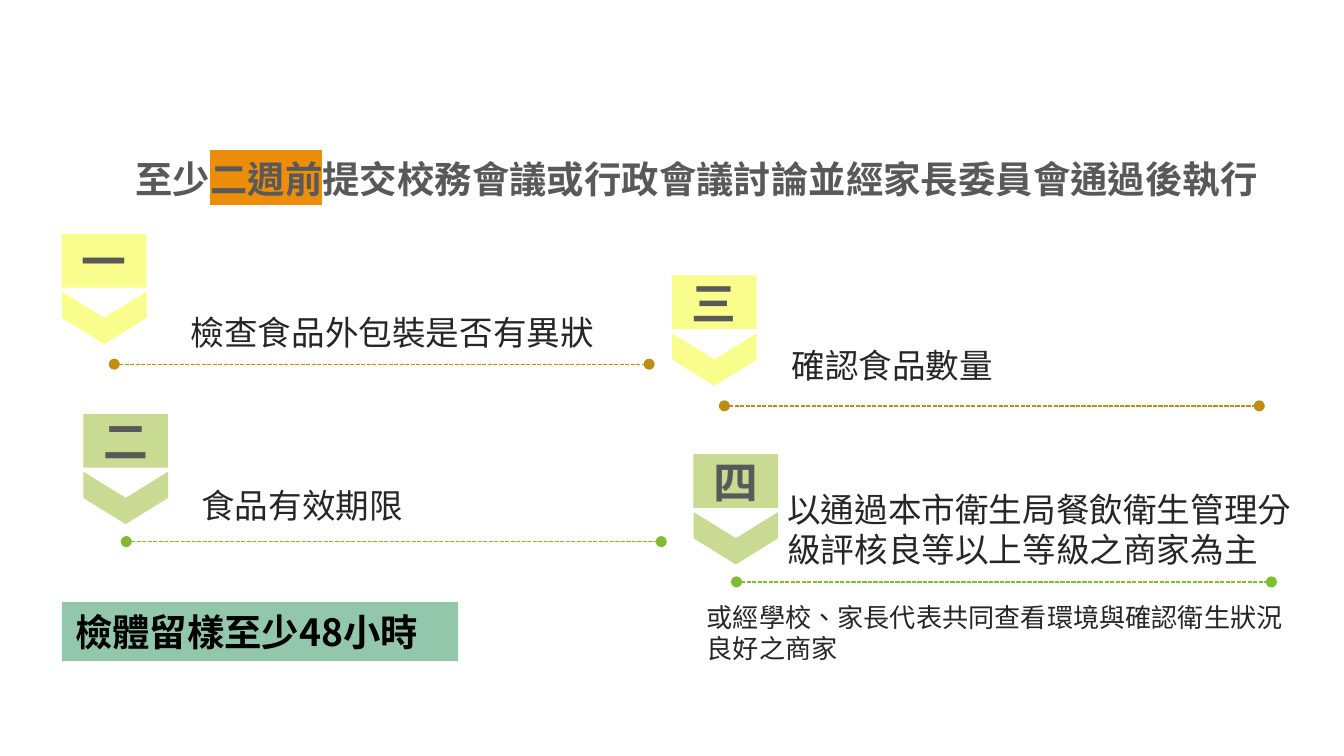
from dataclasses import dataclass
from typing import NamedTuple

from lxml import etree
from pptx import Presentation
from pptx.dml.color import RGBColor
from pptx.enum import dml, lang, shapes, text
from pptx.oxml import ns
from pptx.util import Inches, Pt

JP = "Noto Sans CJK JP"
SC = "Noto Sans CJK SC"
YELLOW = RGBColor(0xF9, 0xFD, 0x8C)
LIME = RGBColor(0xC9, 0xDA, 0x92)
GOLD = RGBColor(0xBF, 0x8D, 0x11)
GREEN = RGBColor(0x80, 0xBC, 0x32)
TEAL = RGBColor(0x93, 0xC7, 0xAC)
ORANGE = RGBColor(0xEC, 0x8E, 0x09)
GRAY = RGBColor(0x59, 0x59, 0x59)
DARK = RGBColor(0x26, 0x26, 0x26)
BLACK = RGBColor(0, 0, 0)

TAG_W, TAG_H = 0.63, 0.4
TIP_W, TIP_H = 0.39, 0.63
RULE = 3.98


class Box(NamedTuple):
    x: float
    y: float
    w: float
    h: float


class Type(NamedTuple):
    face: str
    size: int
    color: RGBColor
    bold: bool = False


@dataclass
class Look:
    fill: RGBColor
    line: RGBColor
    dx: float
    dy: float


@dataclass
class Step:
    tag: str
    x: float
    y: float
    look: Look
    label: str
    box: Box


BODY = Type(JP, 18, DARK)
NOTE = Type(JP, 14, DARK)
HEAD = Type(SC, 20, GRAY, True)
MARK = Type(SC, 24, GRAY, True)
STRONG = Type(JP, 20, BLACK, True)

WARM = Look(YELLOW, GOLD, 0.39, 0.97)
COOL = Look(LIME, GREEN, 0.32, 0.95)
STEPS = [
    Step("一", 0.46, 1.74, WARM, "檢查食品外包裝是否有異狀",
         Box(1.32, 2.27, 3.62, 0.4)),
    Step("二", 0.62, 3.08, COOL, "食品有效期限",
         Box(1.4, 3.56, 3.62, 0.4)),
    Step("三", 5, 2.05, WARM, "確認食品數量",
         Box(5.79, 2.52, 3.62, 0.4)),
    Step("四", 5.16, 3.38, COOL,
         "以通過本市衛生局餐飲衛生管理分級評核良等以上等級之商家為主",
         Box(5.76, 3.58, 3.98, 0.71)),
]


def place(box: Box) -> list:
    return [Inches(v) for v in box]


def write(shape, runs: list[str], style: Type, align=text.PP_ALIGN.LEFT,
          inset: tuple = (0.1, 0.05)) -> None:
    frame = shape.text_frame
    frame.word_wrap = True
    frame.vertical_anchor = text.MSO_ANCHOR.MIDDLE
    frame.margin_left = frame.margin_right = Inches(inset[0])
    frame.margin_top = frame.margin_bottom = Inches(inset[1])
    para = frame.paragraphs[0]
    para.alignment = align
    for part in runs:
        run = para.add_run()
        run.text = part
        run.font.language_id = lang.MSO_LANGUAGE_ID.TRADITIONAL_CHINESE
    font = para.font
    font.name, font.size, font.bold = style.face, Pt(style.size), style.bold
    font.color.rgb = style.color
    # East Asian glyphs take their face from a:ea
    props = para._p.pPr.find(ns.qn("a:defRPr"))
    etree.SubElement(props, ns.qn("a:ea")).set("typeface", style.face)


def shade(run, color: RGBColor) -> None:
    """Highlight one run."""
    mark = etree.SubElement(run._r.get_or_add_rPr(), ns.qn("a:highlight"))
    etree.SubElement(mark, ns.qn("a:srgbClr")).set("val", str(color))


def add_block(slide, kind, box: Box, color: RGBColor):
    shape = slide.shapes.add_shape(kind, *place(box))
    shape.shadow.inherit = False
    shape.fill.solid()
    shape.fill.fore_color.rgb = color
    shape.line.fill.background()
    return shape


def add_text(slide, box: Box, runs: list[str], style: Type):
    shape = slide.shapes.add_textbox(*place(box))
    write(shape, runs, style)
    return shape


def add_rule(slide, x: float, y: float, color: RGBColor) -> None:
    """Dashed line with a dot at each end."""
    rule = slide.shapes.add_connector(
        shapes.MSO_CONNECTOR.STRAIGHT,
        Inches(x), Inches(y), Inches(x + RULE), Inches(y))
    line = rule.line
    line.color.rgb = color
    line.width = Pt(0.75)
    line.dash_style = dml.MSO_LINE.SQUARE_DOT
    props = rule._element.spPr
    for end in ("a:headEnd", "a:tailEnd"):
        etree.SubElement(props.find(ns.qn("a:ln")), ns.qn(end)).set(
            "type", "oval")
    etree.SubElement(props, ns.qn("a:effectLst"))


def add_step(slide, step: Step) -> None:
    look = step.look
    tip = Box(step.x + (TAG_W - TIP_W) / 2, step.y + 0.31, TIP_W, TIP_H)
    add_block(slide, shapes.MSO_SHAPE.CHEVRON, tip, look.fill).rotation = 90
    add_rule(slide, step.x + look.dx, step.y + look.dy, look.line)
    add_text(slide, step.box, [step.label], BODY)
    tag = add_block(slide, shapes.MSO_SHAPE.RECTANGLE,
                    Box(step.x, step.y, TAG_W, TAG_H), look.fill)
    write(tag, [step.tag], MARK, text.PP_ALIGN.CENTER, (0, 0))


def main() -> None:
    deck = Presentation()
    deck.slide_width, deck.slide_height = Inches(10), Inches(5.625)
    slide = deck.slides.add_slide(deck.slide_layouts[6])
    for step in STEPS:
        add_step(slide, step)
    title = add_text(
        slide, Box(0.91, 1.11, 8.62, 0.44),
        ["至少", "二週前", "提交校務會議或行政會議討論並經家長委員會通過後執行"],
        HEAD)
    shade(title.text_frame.paragraphs[0].runs[1], ORANGE)
    add_text(slide, Box(5.16, 4.42, 4.58, 0.57),
             ["或經學校、家長代表共同查看環境與確認衛生狀況良好之商家"], NOTE)
    sample = add_block(slide, shapes.MSO_SHAPE.RECTANGLE,
                       Box(0.46, 4.48, 2.95, 0.44), TEAL)
    write(sample, ["檢體留樣至少48小時"], STRONG, text.PP_ALIGN.JUSTIFY)
    deck.save("out.pptx")


if __name__ == "__main__":
    main()
